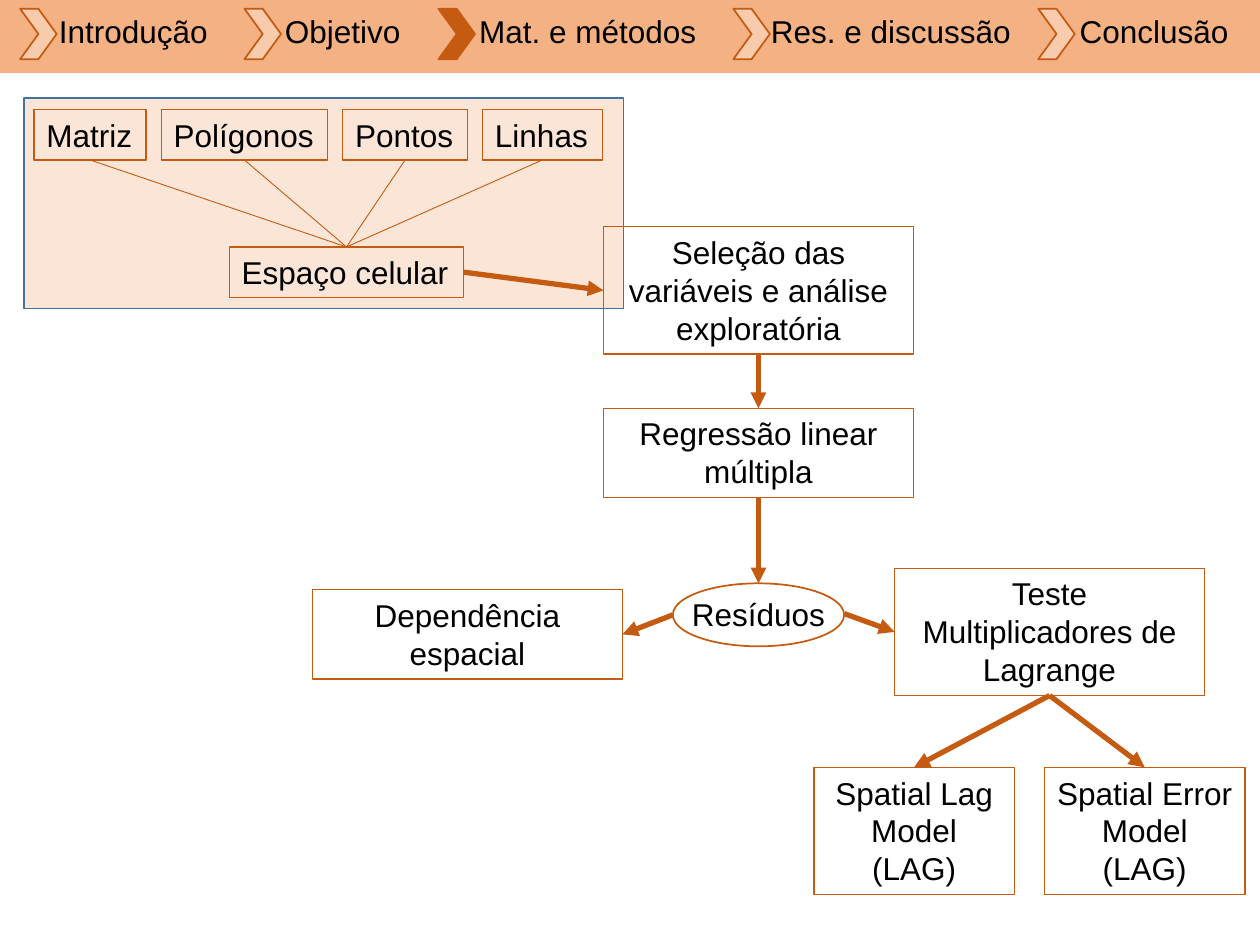
import pptx
import pptx.util
import pptx.dml.color
import pptx.enum.shapes
import pptx.enum.text
import pptx.oxml
import pptx.oxml.ns

RGB = pptx.dml.color.RGBColor
SHAPE = pptx.enum.shapes.MSO_SHAPE
LEFT = pptx.enum.text.PP_ALIGN.LEFT
CENTER = pptx.enum.text.PP_ALIGN.CENTER

BLACK = RGB(0x00, 0x00, 0x00)
RUST = RGB(0xC5, 0x5A, 0x11)
PEACH = RGB(0xF8, 0xCB, 0xAD)
BAND = RGB(0xF4, 0xB1, 0x83)
PANEL = RGB(0xFB, 0xE5, 0xD6)
BLUE = RGB(0x43, 0x73, 0x9E)

COLS, ROWS = 100, 75
TOP, LEFT_SIDE, BOTTOM, RIGHT_SIDE = range(4)


class Diagram:
    """Holds the style and the current slide; lengths are grid columns and rows."""

    font = "Arial"
    size = pptx.util.Pt(18)

    def __init__(self, prs):
        self.col = prs.slide_width / COLS
        self.row = prs.slide_height / ROWS
        self.slide = prs.slides.add_slide(prs.slide_layouts[6])

    def place(self, x, y, w, h):
        return (round(x * self.col), round(y * self.row),
                round(w * self.col), round(h * self.row))

    def shape(self, kind, at, fill=None, line=None, width=1):
        sp = self.slide.shapes.add_shape(kind, *self.place(*at))
        sp.shadow.inherit = False
        if fill is None:
            sp.fill.background()
        else:
            sp.fill.solid()
            sp.fill.fore_color.rgb = fill
        if line is None:
            sp.line.fill.background()
        else:
            sp.line.color.rgb = line
            sp.line.width = pptx.util.Pt(width)
        return sp

    def add_text(self, sp, text, align, wrap=True):
        tf = sp.text_frame
        tf.word_wrap = wrap
        tf.auto_size = pptx.enum.text.MSO_AUTO_SIZE.SHAPE_TO_FIT_TEXT
        tf.vertical_anchor = pptx.enum.text.MSO_ANCHOR.TOP
        p = tf.paragraphs[0]
        p.alignment = align
        r = p.add_run()
        r.text = text
        r.font.name = self.font
        r.font.size = self.size
        r.font.color.rgb = BLACK

    def label(self, text, at, align=CENTER):
        sp = self.slide.shapes.add_textbox(*self.place(*at))
        self.add_text(sp, text, align)

    def box(self, text, at, align=CENTER, wrap=True):
        sp = self.shape(SHAPE.RECTANGLE, at, line=RUST, width=0.75)
        self.add_text(sp, text, align, wrap)
        return sp

    def link(self, start, end, width=3, arrow=True):
        """Join start, a (shape, side) pair or a (column, row) point, to a (shape, side) end."""
        cxn = self.slide.shapes.add_connector(
            pptx.enum.shapes.MSO_CONNECTOR.STRAIGHT, 0, 0, 0, 0)
        if isinstance(start[0], (int, float)):
            cxn.begin_x, cxn.begin_y = self.place(*start, 0, 0)[:2]
        else:
            cxn.begin_connect(*start)
        cxn.end_connect(*end)
        cxn.line.color.rgb = RUST
        cxn.line.width = pptx.util.Pt(width)
        ns = pptx.oxml.ns.nsdecls("a")
        if arrow:
            cxn.get_or_add_ln().append(
                pptx.oxml.parse_xml(f'<a:tailEnd {ns} type="triangle"/>'))
        cxn.element.spPr.append(pptx.oxml.parse_xml(f"<a:effectLst {ns}/>"))


def draw_header(d):
    d.shape(SHAPE.RECTANGLE, (0, 0, COLS, 5.8), BAND)
    current = "Mat. e métodos"
    steps = [  # name, chevron column, text column, text width, alignment
        ("Introdução", 1.6, 3.7, 14.4, LEFT),
        ("Objetivo", 19.4, 20, 14.4, CENTER),
        (current, 34.8, 36.6, 20.1, CENTER),
        ("Res. e discussão", 58.2, 60.2, 21.8, LEFT),
        ("Conclusão", 82.4, 84.4, 14.4, CENTER),
    ]
    for name, mark, x, w, align in steps:
        fill = RUST if name == current else PEACH
        d.shape(SHAPE.CHEVRON, (mark, 0.7, 2.9, 4), fill, RUST)
        d.label(name, (x, 0.5, w, 4), align)


def draw_inputs(d):
    """Draw the shaded panel and return its cell-space box."""
    d.shape(SHAPE.RECTANGLE, (1.9, 7.8, 47.6, 16.7), PANEL, BLUE)
    cells = d.box("Espaço celular", (18.2, 19.6, 18.6, 4), LEFT, wrap=False)
    x, gap = 2.7, 1.2
    for name, w in [("Matriz", 8.9), ("Polígonos", 13.2),
                    ("Pontos", 9.9), ("Linhas", 9.5)]:
        source = d.box(name, (x, 8.7, w, 4), LEFT, wrap=False)
        d.link((source, BOTTOM), (cells, TOP), width=0.5, arrow=False)
        x += w + gap
    return cells


def draw_flow(d, cells):
    mid, wide, narrow = 47.9, 24.6, 15.9
    two_lines, three_lines = 7.1, 10.1
    selection = d.box("Seleção das variáveis e análise exploratória",
                      (mid, 18, wide, three_lines))
    regression = d.box("Regressão linear múltipla", (mid, 32.4, wide, two_lines))
    residuals = d.shape(SHAPE.OVAL, (53.4, 46.3, 13.6, 5), line=RUST)
    d.label("Resíduos", (mid, 46.7, wide, 4))
    dependence = d.box("Dependência espacial", (24.8, 46.8, wide, two_lines))
    test = d.box("Teste Multiplicadores de Lagrange",
                 (71, 45.1, wide, three_lines))
    models = [d.box(f"Spatial {kind} Model (LAG)", (x, 60.9, narrow, three_lines))
              for kind, x in [("Lag", 64.6), ("Error", 82.9)]]

    d.link((cells, RIGHT_SIDE), (selection, LEFT_SIDE))
    d.link((selection, BOTTOM), (regression, TOP))
    d.link((regression, BOTTOM), (residuals, TOP))
    d.link((53.4, 48.8), (dependence, RIGHT_SIDE))
    d.link((67, 48.7), (test, LEFT_SIDE))
    for model in models:
        d.link((test, BOTTOM), (model, TOP))


def main():
    prs = pptx.Presentation()
    prs.slide_width = pptx.util.Inches(10)
    prs.slide_height = pptx.util.Inches(7.5)
    d = Diagram(prs)
    cells = draw_inputs(d)
    draw_header(d)
    draw_flow(d, cells)
    prs.save("out.pptx")


if __name__ == "__main__":
    main()
